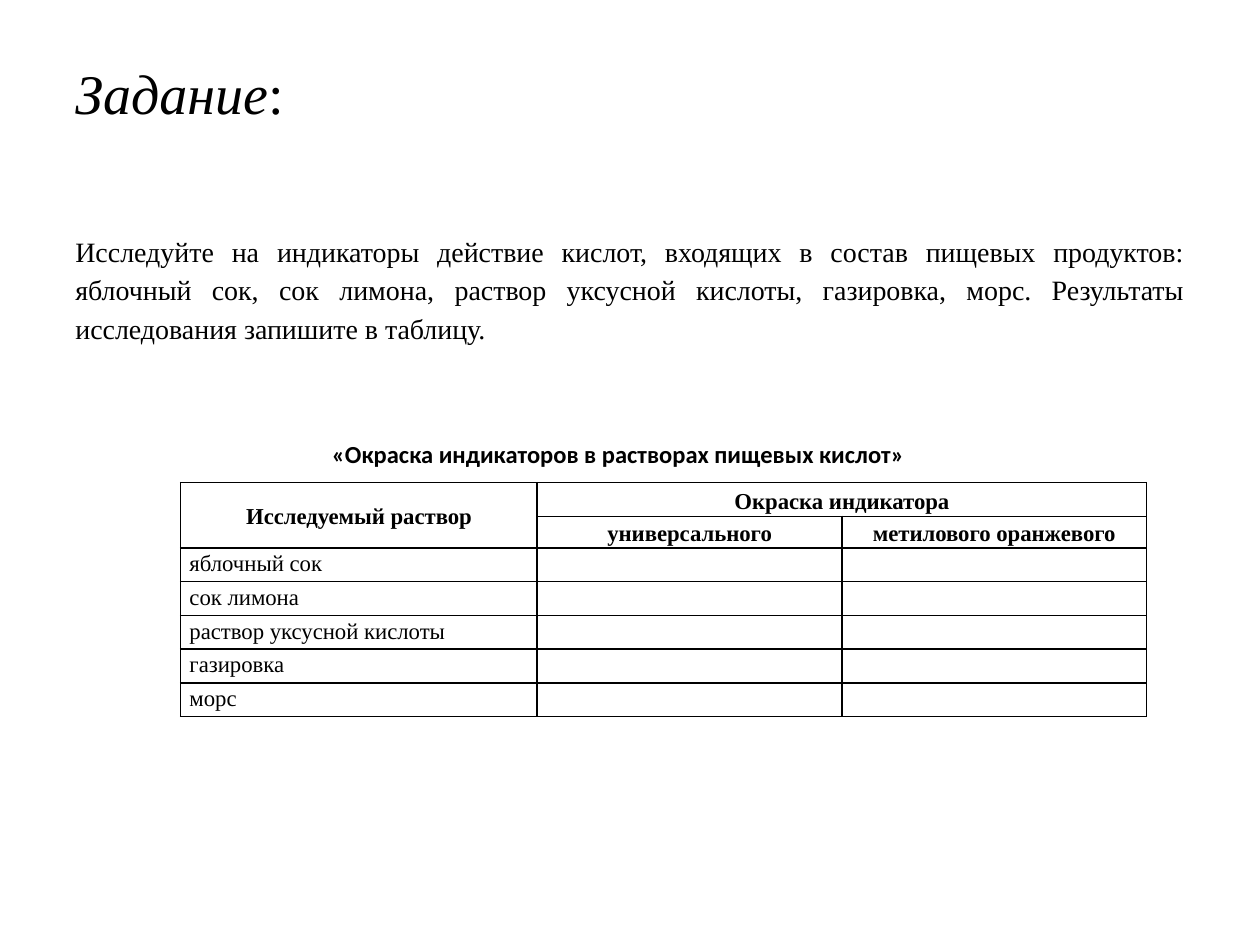
import pptx
import pptx.util
import pptx.dml.color
import pptx.enum.text
import pptx.oxml
import pptx.oxml.ns
import lxml.etree

Cm = pptx.util.Cm
Pt = pptx.util.Pt
ALIGN = pptx.enum.text.PP_ALIGN
ANCHOR = pptx.enum.text.MSO_ANCHOR
SERIF = "Times New Roman"
BLACK = "000000"
HEADERS = {
    (0, 0): "Исследуемый раствор",
    (0, 1): "Окраска индикатора",
    (1, 1): "универсального",
    (1, 2): "метилового оранжевого",
}
SOLUTIONS = ["яблочный сок", "сок лимона", "раствор уксусной кислоты", "газировка", "морс"]
COL_WIDTHS = [7.19, 6.14, 6.14]
HEADER_HEIGHTS = [0.68, 0.57]
ROW_HEIGHT = 0.68


def color(hex_text):
    return pptx.dml.color.RGBColor.from_string(hex_text)


def add_run(p, text, size=16, font=SERIF, bold=False, italic=False, fill=BLACK):
    r = p.add_run()
    r.text = text
    r.font.size = Pt(size)
    r.font.name = font
    r.font.bold = bold
    r.font.italic = italic
    r.font.color.rgb = color(fill)


def format_paragraph(p, align=ALIGN.JUSTIFY, spacing=1.15):
    p.alignment = align
    p.line_spacing = spacing


def add_text(slide, left, top, width, height, runs, anchor=ANCHOR.TOP, **layout):
    sp = slide.shapes.add_textbox(Cm(left), Cm(top), Cm(width), Cm(height))
    tf = sp.text_frame
    tf.word_wrap = True
    tf.vertical_anchor = anchor
    p = tf.paragraphs[0]
    format_paragraph(p, **layout)
    for text, style in runs:
        add_run(p, text, **style)


def set_borders(cell, fill=BLACK, width=1):
    """Draw all four edges of a table cell."""
    tc_pr = cell._tc.get_or_add_tcPr()
    for side in ("lnL", "lnR", "lnT", "lnB"):
        ln = lxml.etree.SubElement(tc_pr, pptx.oxml.ns.qn(f"a:{side}"), w=str(Pt(width)))
        solid = lxml.etree.SubElement(ln, pptx.oxml.ns.qn("a:solidFill"))
        lxml.etree.SubElement(solid, pptx.oxml.ns.qn("a:srgbClr"), val=fill)


def fill_cell(cell, text, header=False, size=13):
    cell.margin_left = cell.margin_right = Cm(0.18)
    cell.margin_top = cell.margin_bottom = 0
    cell.vertical_anchor = ANCHOR.MIDDLE if header else ANCHOR.TOP
    set_borders(cell)
    cell.fill.background()
    p = cell.text_frame.paragraphs[0]
    format_paragraph(p, align=ALIGN.CENTER if header else ALIGN.JUSTIFY)
    if text:
        add_run(p, text, size=size, bold=header)
    else:
        lxml.etree.SubElement(p._p, pptx.oxml.ns.qn("a:endParaRPr"), sz=str(size * 100))


def add_results_table(slide, left, top):
    heights = HEADER_HEIGHTS + [ROW_HEIGHT] * len(SOLUTIONS)
    frame = slide.shapes.add_table(
        len(heights), len(COL_WIDTHS), Cm(left), Cm(top), Cm(sum(COL_WIDTHS)), Cm(sum(heights))
    )
    table = frame.table
    table.first_row = table.horz_banding = False
    for column, width in zip(table.columns, COL_WIDTHS):
        column.width = Cm(width)
    texts = dict(HEADERS)
    for i, solution in enumerate(SOLUTIONS, len(HEADER_HEIGHTS)):
        texts[i, 0] = solution
    for i, height in enumerate(heights):
        table.rows[i].height = Cm(height)
        for j in range(len(COL_WIDTHS)):
            fill_cell(table.cell(i, j), texts.get((i, j), ""), header=i < len(HEADER_HEIGHTS))
    table.cell(0, 0).merge(table.cell(1, 0))
    table.cell(0, 1).merge(table.cell(0, 2))


def main():
    prs = pptx.Presentation()
    prs.slide_width, prs.slide_height = Cm(25.4), Cm(19.05)
    slide = prs.slides.add_slide(prs.slide_layouts[6])
    add_text(slide, 1.27, 0.85, 22.86, 2.5,
             [("Задание", {"size": 32, "italic": True}), (":", {"size": 32})])
    add_text(slide, 1.27, 4.5, 22.86, 12.5, [(
        "Исследуйте на индикаторы действие кислот, входящих в состав пищевых продуктов: "
        "яблочный сок, сок лимона, раствор уксусной кислоты, газировка, морс. "
        "Результаты исследования запишите в таблицу.", {})])
    add_results_table(slide, 3.64, 9.73)
    add_text(slide, 3.64, 8.72, 17.65, 0.86,
             [("«Окраска индикаторов в растворах пищевых кислот»",
               {"size": 14, "font": "Calibri", "bold": True})],
             anchor=ANCHOR.MIDDLE, align=ALIGN.CENTER, spacing=1.0)
    prs.save("out.pptx")


if __name__ == "__main__":
    main()
